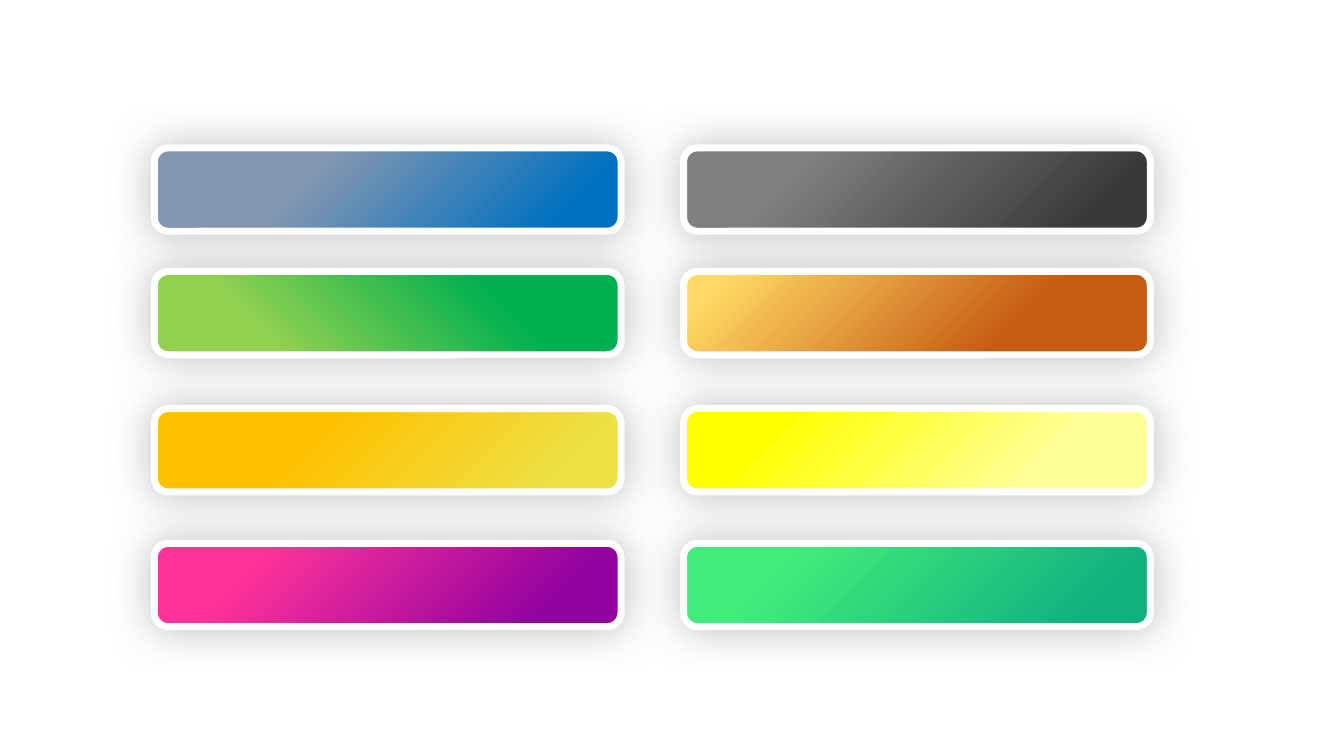
from dataclasses import dataclass

import lxml.etree
import pptx
import pptx.dml.color
import pptx.enum.shapes
import pptx.oxml.ns
import pptx.presentation
import pptx.shapes.autoshape
import pptx.slide
import pptx.util

RGBColor = pptx.dml.color.RGBColor

SLIDE_WIDTH = pptx.util.Inches(13.33)
SLIDE_HEIGHT = pptx.util.Inches(7.5)

# Percent of the slide's width
COLUMN_LEFTS = (11.48, 50.86)
BAR_WIDTH = 34.73
# Percent of the slide's height
ROW_TOPS = (19.56, 35.9, 54.04, 71.87)
BAR_HEIGHT = 11.03

# Counter-clockwise degrees
DOWNWARD = 315
UPWARD = 45

BORDER_WIDTH = pptx.util.Pt(5)
SHADOW_BLUR = pptx.util.Pt(30)
SHADOW_OPACITY = 73

WHITE = RGBColor(0xFF, 0xFF, 0xFF)
SHADOW_GRAY = RGBColor(0xA6, 0xA6, 0xA6)
SLATE = RGBColor(0x84, 0x97, 0xB0)
BLUE = RGBColor(0x00, 0x70, 0xC0)
LIGHT_GREEN = RGBColor(0x92, 0xD0, 0x50)
GREEN = RGBColor(0x00, 0xB0, 0x50)
AMBER = RGBColor(0xFF, 0xC0, 0x00)
MUSTARD = RGBColor(0xED, 0xE1, 0x45)
PINK = RGBColor(0xFF, 0x33, 0x99)
PURPLE = RGBColor(0x94, 0x03, 0x9F)
GRAY = RGBColor(0x80, 0x80, 0x80)
CHARCOAL = RGBColor(0x3B, 0x38, 0x38)
SAND = RGBColor(0xFF, 0xD9, 0x66)
RUST = RGBColor(0xC5, 0x5A, 0x11)
YELLOW = RGBColor(0xFF, 0xFF, 0x00)
PALE_YELLOW = RGBColor(0xFF, 0xFF, 0x99)
MINT = RGBColor(0x41, 0xED, 0x7A)
TEAL = RGBColor(0x0F, 0xB1, 0x7F)


@dataclass(frozen=True)
class GradientBar:
    """A bar's grid cell and its gradient, with stop positions in percent."""

    column: int
    row: int
    start_color: RGBColor
    start: int
    end_color: RGBColor
    end: int
    angle: int = DOWNWARD


BARS = (
    GradientBar(0, 0, SLATE, 33, BLUE, 87),
    GradientBar(0, 1, LIGHT_GREEN, 24, GREEN, 73, UPWARD),
    GradientBar(0, 2, AMBER, 33, MUSTARD, 87),
    GradientBar(0, 3, PINK, 21, PURPLE, 82),
    GradientBar(1, 0, GRAY, 24, CHARCOAL, 87),
    GradientBar(1, 1, SAND, 8, RUST, 71),
    GradientBar(1, 2, YELLOW, 19, PALE_YELLOW, 76),
    GradientBar(1, 3, MINT, 21, TEAL, 87),
)


def share(percent: float, total: int) -> int:
    return round(total * percent / 100)


def add_glow_shadow(shape: pptx.shapes.autoshape.Shape) -> None:
    """Give the shape a soft shadow that spreads evenly on all sides."""
    shape.shadow.inherit = False
    qualified = pptx.oxml.ns.qn
    effects = shape.element.spPr.find(qualified("a:effectLst"))
    shadow = lxml.etree.SubElement(
        effects,
        qualified("a:outerShdw"),
        {
            "blurRad": str(int(SHADOW_BLUR)),
            "dist": "0",
            "dir": "0",
            "algn": "ctr",
            "rotWithShape": "0",
        },
    )
    color = lxml.etree.SubElement(shadow, qualified("a:srgbClr"), val=str(SHADOW_GRAY))
    lxml.etree.SubElement(color, qualified("a:alpha"), val=str(SHADOW_OPACITY * 1000))


def add_bar(slide: pptx.slide.Slide, bar: GradientBar) -> None:
    shape = slide.shapes.add_shape(
        pptx.enum.shapes.MSO_SHAPE.ROUNDED_RECTANGLE,
        share(COLUMN_LEFTS[bar.column], SLIDE_WIDTH),
        share(ROW_TOPS[bar.row], SLIDE_HEIGHT),
        share(BAR_WIDTH, SLIDE_WIDTH),
        share(BAR_HEIGHT, SLIDE_HEIGHT),
    )
    shape.fill.gradient()
    shape.fill.gradient_angle = bar.angle
    stops = ((bar.start_color, bar.start), (bar.end_color, bar.end))
    for gradient_stop, (color, position) in zip(shape.fill.gradient_stops, stops):
        gradient_stop.color.rgb = color
        gradient_stop.position = position / 100
    shape.line.color.rgb = WHITE
    shape.line.width = BORDER_WIDTH
    add_glow_shadow(shape)


def build_presentation() -> pptx.presentation.Presentation:
    presentation = pptx.Presentation()
    presentation.slide_width = SLIDE_WIDTH
    presentation.slide_height = SLIDE_HEIGHT
    blank_layout = presentation.slide_layouts.get_by_name("Blank")
    slide = presentation.slides.add_slide(blank_layout)
    for bar in BARS:
        add_bar(slide, bar)
    return presentation


def main() -> None:
    build_presentation().save("out.pptx")


if __name__ == "__main__":
    main()
